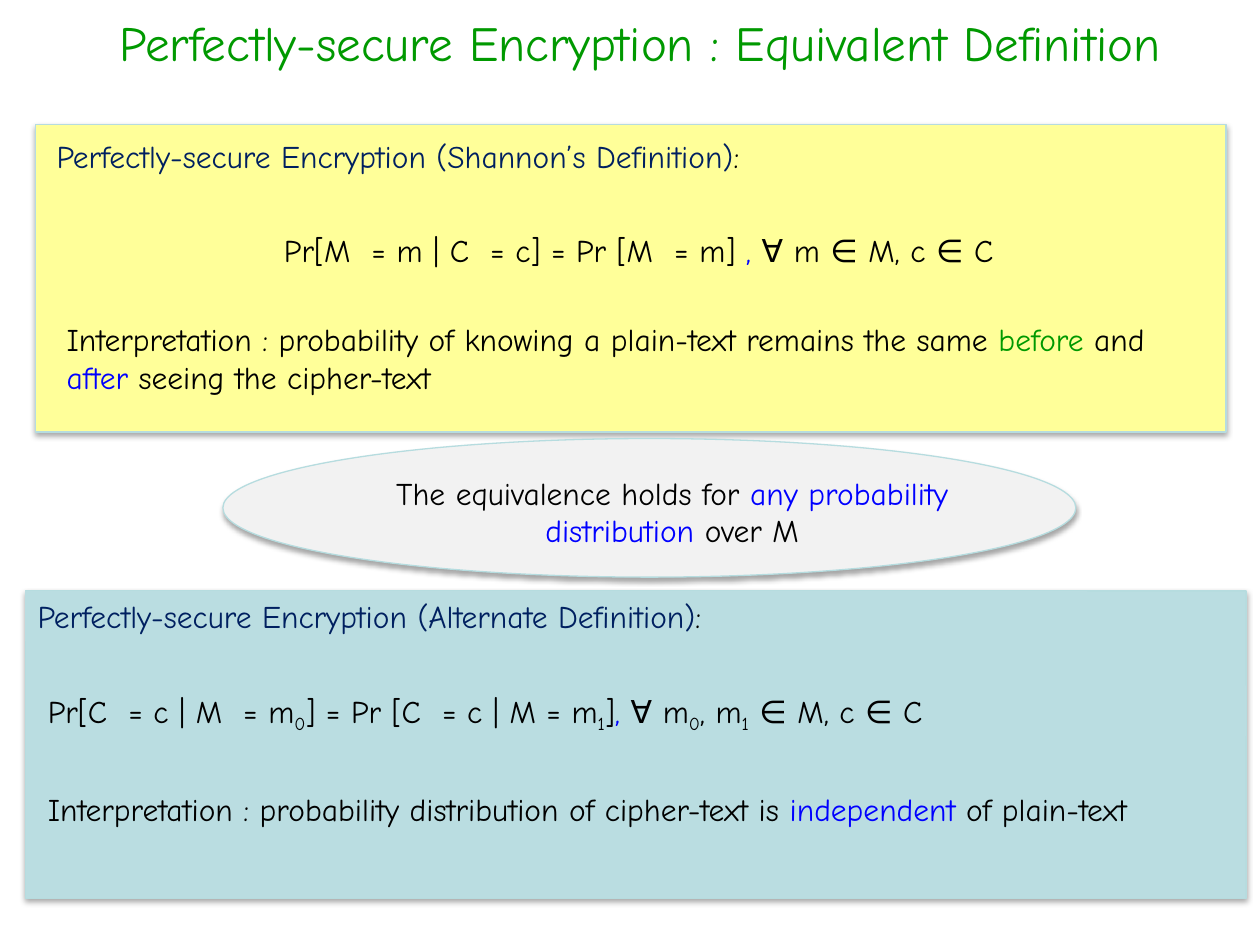
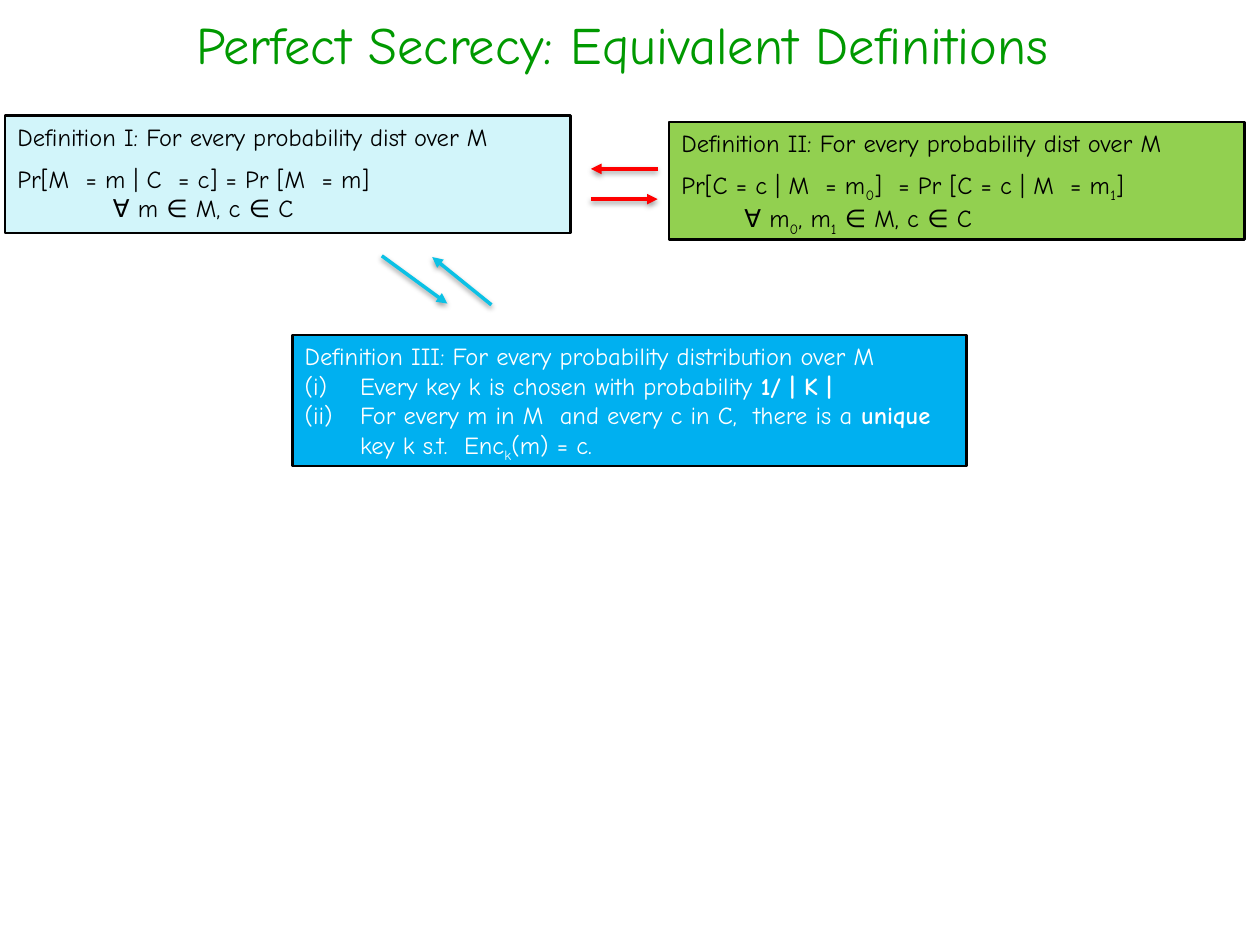
from dataclasses import dataclass

from lxml.etree import SubElement
from pptx import Presentation
from pptx.dml.color import RGBColor
from pptx.enum.shapes import MSO_CONNECTOR, MSO_SHAPE
from pptx.enum.text import MSO_ANCHOR, PP_ALIGN
from pptx.oxml.ns import qn
from pptx.util import Pt

FONT = "Comic Neue"
BLACK = RGBColor(0x00, 0x00, 0x00)
WHITE = RGBColor(0xFF, 0xFF, 0xFF)
GREEN = RGBColor(0x00, 0x99, 0x00)
BLUE = RGBColor(0x00, 0x00, 0xFF)
NAVY = RGBColor(0x00, 0x20, 0x60)
RED = RGBColor(0xFF, 0x00, 0x00)
CYAN = RGBColor(0x0B, 0xC1, 0xE5)
YELLOW = RGBColor(0xFF, 0xFF, 0x99)
TEAL = RGBColor(0xBA, 0xDD, 0xE1)
TEAL_EDGE = RGBColor(0xB6, 0xDC, 0xDF)
GREY = RGBColor(0xF2, 0xF2, 0xF2)
LIME = RGBColor(0x92, 0xD0, 0x50)
PALE_CYAN = RGBColor(0xD2, 0xF5, 0xFA)
SKY = RGBColor(0x00, 0xB0, 0xF0)


@dataclass(frozen=True)
class Frame:
    left: float
    top: float
    width: float
    height: float

    def lengths(self) -> tuple:
        return Pt(self.left), Pt(self.top), Pt(self.width), Pt(self.height)


@dataclass(frozen=True)
class Span:
    text: str
    color: RGBColor | None = None
    bold: bool = False
    subscript: bool = False


@dataclass(frozen=True)
class Line:
    spans: tuple
    before: float = 0
    indent: float = 0
    numbered: bool = False


@dataclass(frozen=True)
class TextStyle:
    size: float
    color: RGBColor = BLACK
    align: PP_ALIGN = PP_ALIGN.LEFT


@dataclass(frozen=True)
class Definition:
    frame: Frame
    fill: RGBColor
    style: TextStyle
    lines: tuple


@dataclass(frozen=True)
class Arrow:
    start: tuple
    tip: tuple
    color: RGBColor


TITLE_1 = TextStyle(28, GREEN, PP_ALIGN.CENTER)
TITLE_2 = TextStyle(30, GREEN, PP_ALIGN.CENTER)
BODY = TextStyle(18)
CENTERED = TextStyle(18, align=PP_ALIGN.CENTER)
SMALL = TextStyle(14)
SMALL_WHITE = TextStyle(14, WHITE)
FORMULA_GAP = 7
ITEM_INDENT = 31.7


def sub(text: str) -> Span:
    return Span(text, subscript=True)


def line(*spans: Span | str, before: float = 0, indent: float = 0, numbered: bool = False) -> Line:
    full = tuple(Span(span) if isinstance(span, str) else span for span in spans)
    return Line(full, before, indent, numbered)


def write(shape, lines: tuple, style: TextStyle) -> None:
    frame = shape.text_frame
    frame.word_wrap = True
    frame.vertical_anchor = MSO_ANCHOR.TOP
    for index, item in enumerate(lines):
        para = frame.add_paragraph() if index else frame.paragraphs[0]
        para.alignment = style.align
        para.space_before = Pt(item.before)
        properties = para._p.get_or_add_pPr()
        if item.indent:
            properties.set("marL", str(Pt(item.indent)))
        if item.numbered:
            properties.set("indent", str(-Pt(item.indent)))
            SubElement(properties, qn("a:buFont"), typeface=FONT)
            SubElement(properties, qn("a:buAutoNum"), type="romanLcParenBoth")
        for span in item.spans:
            run = para.add_run()
            run.text = span.text
            run.font.name = FONT
            run.font.size = Pt(style.size)
            run.font.bold = span.bold
            run.font.color.rgb = style.color if span.color is None else span.color
            if span.subscript:
                run._r.get_or_add_rPr().set("baseline", "-25000")


def add_text(page, frame: Frame, style: TextStyle, *lines: Line) -> None:
    write(page.shapes.add_textbox(*frame.lengths()), lines, style)


def add_block(page, kind: MSO_SHAPE, frame: Frame, fill: RGBColor,
              edge: RGBColor | None = None, edge_width: float = 0.75):
    shape = page.shapes.add_shape(kind, *frame.lengths())
    shape.shadow.inherit = False
    shape.fill.solid()
    shape.fill.fore_color.rgb = fill
    if edge is None:
        shape.line.fill.background()
    else:
        shape.line.color.rgb = edge
        shape.line.width = Pt(edge_width)
    return shape


def cast_shadow(shape, distance: float, opacity: int) -> None:
    properties = shape._element.spPr
    effects = properties.find(qn("a:effectLst"))
    if effects is None:
        effects = SubElement(properties, qn("a:effectLst"))
    shadow = SubElement(effects, qn("a:outerShdw"), blurRad=str(Pt(3.1)),
                        dist=str(Pt(distance)), dir="5400000", rotWithShape="0")
    color = SubElement(shadow, qn("a:srgbClr"), val=str(BLACK))
    SubElement(color, qn("a:alpha"), val=str(opacity * 1000))


def add_panel(page, kind: MSO_SHAPE, frame: Frame, fill: RGBColor) -> None:
    cast_shadow(add_block(page, kind, frame, fill, TEAL_EDGE), 1.8, 35)


def add_definition(page, definition: Definition) -> None:
    box = add_block(page, MSO_SHAPE.RECTANGLE, definition.frame, definition.fill, BLACK, 1.5)
    write(box, definition.lines, definition.style)


def add_arrow(page, arrow: Arrow) -> None:
    ends = [Pt(value) for value in arrow.start + arrow.tip]
    connector = page.shapes.add_connector(MSO_CONNECTOR.STRAIGHT, *ends)
    connector.line.color.rgb = arrow.color
    connector.line.width = Pt(2)
    SubElement(connector.line._get_or_add_ln(), qn("a:tailEnd"), type="triangle")
    cast_shadow(connector, 1.6, 38)


def build_shannon_page(page) -> None:
    add_text(page, Frame(14.4, 3.6, 702.7, 39.6), TITLE_1,
             line("Perfectly-secure Encryption : Equivalent Definition"))

    add_panel(page, MSO_SHAPE.RECTANGLE, Frame(20.2, 71.3, 680.4, 175.7), YELLOW)
    add_text(page, Frame(25.2, 74.9, 691.9, 28.8), BODY,
             line(Span("Perfectly-secure Encryption (Shannon’s Definition)", NAVY), ":"))
    add_text(page, Frame(84, 128.2, 562, 28.8), CENTERED,
             line("Pr[M  = m | C  = c] = Pr [M  = m] ", Span(", ", BLUE), "∀ m ∈ M, c ∈ C"))
    add_text(page, Frame(31, 179.3, 646.6, 51.1), BODY,
             line("Interpretation : probability of knowing a plain-text remains the same ",
                  Span("before", GREEN), " and ", Span("after", BLUE),
                  " seeing the cipher-text"))

    add_panel(page, MSO_SHAPE.RECTANGLE, Frame(14.4, 337.7, 697.7, 175.7), TEAL)
    alternate_rows = (
        (Frame(14.4, 337.7, 607, 28.8),
         line(Span("Perfectly-secure Encryption (Alternate Definition)", NAVY), ":")),
        (Frame(20.2, 391.7, 691.9, 28.8),
         line("Pr[C  = c | M  = m", sub("0"), "] = Pr [C  = c | M = m", sub("1"), "]",
              Span(", ", BLUE), "∀ m", sub("0"), ", m", sub("1"), " ∈ M, c ∈ C")),
        (Frame(20.2, 447.8, 646.6, 28.8),
         line("Interpretation : probability distribution of cipher-text is ",
              Span("independent", BLUE), " of plain-text")),
    )
    for frame, content in alternate_rows:
        write(add_block(page, MSO_SHAPE.RECTANGLE, frame, TEAL), (content,), BODY)

    add_panel(page, MSO_SHAPE.OVAL, Frame(127.4, 250.6, 487.4, 79.2), GREY)
    add_text(page, Frame(187.2, 267.1, 393.8, 51.8), CENTERED,
             line("The equivalence holds for ",
                  Span("any probability distribution ", BLUE), "over M"))


def build_definitions_page(page) -> None:
    add_text(page, Frame(-11.5, 3.6, 734.4, 51.1), TITLE_2,
             line("Perfect Secrecy: Equivalent Definitions"))

    definitions = (
        Definition(Frame(382.3, 69.8, 329, 67), LIME, SMALL, (
            line("Definition II: For every probability dist over M"),
            line("Pr[C = c | M  = m", sub("0"), "]  = Pr [C = c | M  = m", sub("1"), "]",
                 before=FORMULA_GAP),
            line("∀ m", sub("0"), ", m", sub("1"), " ∈ M, c ∈ C", indent=36))),
        Definition(Frame(2.9, 66.2, 323.3, 67), PALE_CYAN, SMALL, (
            line("Definition I: For every probability dist over M"),
            line("Pr[M  = m | C  = c] = Pr [M  = m]", before=FORMULA_GAP),
            line("∀ m ∈ M, c ∈ C", indent=54.5))),
        Definition(Frame(167, 191.5, 385.2, 74.9), SKY, SMALL_WHITE, (
            line("Definition III: For every probability distribution over M"),
            line("Every key k is chosen with probability ", Span("1/ | K |", bold=True),
                 indent=ITEM_INDENT, numbered=True),
            line("For every m in M  and every c in C,  there is a ",
                 Span("unique ", bold=True), "key k s.t.  Enc", sub("k"), "(m) = c.",
                 indent=ITEM_INDENT, numbered=True))),
    )
    for definition in definitions:
        add_definition(page, definition)

    arrows = (
        Arrow((375.8, 96.5), (337.7, 96.5), RED),
        Arrow((337.7, 113.8), (375.8, 113.8), RED),
        Arrow((280.8, 174.2), (247, 146.9), CYAN),
        Arrow((218.2, 146.2), (255.6, 173.5), CYAN),
    )
    for arrow in arrows:
        add_arrow(page, arrow)


def main() -> None:
    deck = Presentation()
    deck.slide_width, deck.slide_height = Pt(720), Pt(540)
    for build in (build_shannon_page, build_definitions_page):
        build(deck.slides.add_slide(deck.slide_layouts[6]))
    deck.save("out.pptx")


if __name__ == "__main__":
    main()
